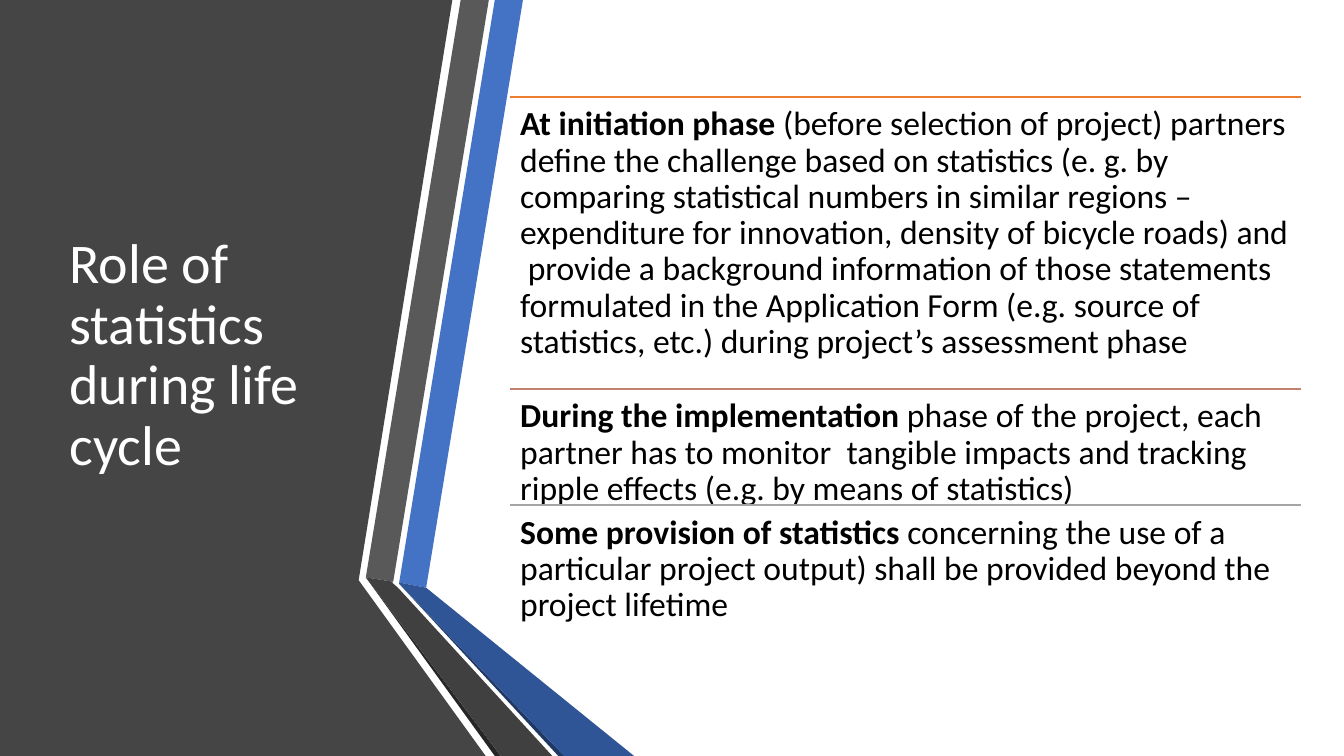
from dataclasses import dataclass

import lxml.etree
import pptx
import pptx.dml.color
import pptx.enum.shapes
import pptx.enum.text
import pptx.oxml.ns
import pptx.util

Cm = pptx.util.Cm
Point = tuple[float, float]

COLOURS = {
    "panel": "454545",
    "blue": "4472C4",
    "grey": "595959",
    "grey edge": "262626",
    "blue edge": "203864",
    "blue fold": "2F5597",
    "grey fold": "404040",
    "orange": "ED7D31",
    "rose": "C48170",
    "silver": "A5A5A5",
    "white": "FFFFFF",
    "black": "000000",
}
FONT = "Calibri"
WIDTH, HEIGHT = 33.87, 19.05
PHASE_LEFT, PHASE_WIDTH = 12.86, 19.92
GREY_BEND: Point = (9.22, 14.55)
BLUE_BEND: Point = (10.06, 14.71)


@dataclass
class Band:
    colour: str
    points: list[Point]


@dataclass
class Phase:
    colour: str
    top: float
    height: float
    lead: str
    detail: str


BANDS = [
    Band("panel", [(0, 0), (11.4, 0), (9.04, 14.62), (12.24, HEIGHT), (0, HEIGHT)]),
    Band("blue", [(10.06, 14.68), (10.74, 14.81), (13.18, 0), (12.47, 0)]),
    Band("grey", [(12.32, 0), (11.61, 0), GREY_BEND, (9.91, 14.66)]),
    Band("grey edge", [GREY_BEND, (12.47, HEIGHT), (12.62, HEIGHT)]),
    Band("blue edge", [BLUE_BEND, (14.07, HEIGHT), (14.22, HEIGHT)]),
    Band("blue fold", [BLUE_BEND, (14.22, HEIGHT), (15.98, HEIGHT),
                       (10.74, 14.81), (10.06, 14.68)]),
    Band("grey fold", [(13.92, HEIGHT), (10.03, 14.81), (9.88, 14.68),
                       (9.91, 14.66), GREY_BEND, (12.62, HEIGHT)]),
]

PHASES = [
    Phase("orange", 2.44, 7.36, "At initiation phase ",
          "(before selection of project) partners define the challenge based on "
          "statistics (e. g. by comparing statistical numbers in similar regions – "
          "expenditure for innovation, density of bicycle roads) and  provide a "
          "background information of those statements formulated in the Application "
          "Form (e.g. source of statistics, etc.) during project’s assessment phase"),
    Phase("rose", 9.8, 2.93, "During the implementation ",
          "phase of the project, each partner has to monitor  tangible impacts and "
          "tracking ripple effects (e.g. by means of statistics)"),
    Phase("silver", 12.73, 3.89, "Some provision of statistics ",
          "concerning the use of a particular project output) shall be provided "
          "beyond the project lifetime"),
]


def rgb(name: str) -> pptx.dml.color.RGBColor:
    return pptx.dml.color.RGBColor.from_string(COLOURS[name])


def write_text(paragraph, text: str, *, size: float, colour: str, bold: bool = False) -> None:
    """Append one formatted run to a left-aligned paragraph."""
    paragraph.alignment = pptx.enum.text.PP_ALIGN.LEFT
    paragraph.line_spacing = 0.9
    run = paragraph.add_run()
    run.text = text
    run.font.name = FONT
    run.font.size = pptx.util.Pt(size)
    run.font.bold = bold
    run.font.color.rgb = rgb(colour)


def draw_band(slide, band: Band) -> None:
    start, *others = [(Cm(x), Cm(y)) for x, y in band.points]
    builder = slide.shapes.build_freeform(*start)
    builder.add_line_segments(others, close=True)
    shape = builder.convert_to_shape()
    shape.shadow.inherit = False
    shape.fill.solid()
    shape.fill.fore_color.rgb = rgb(band.colour)
    shape.line.fill.background()


def draw_title(slide, text: str) -> None:
    title = slide.shapes.title
    # The placeholder starts at the back, behind the dark panel.
    title.element.getparent().append(title.element)
    title.left, title.top, title.width, title.height = Cm(1.5), Cm(1.9), Cm(7.72), Cm(14.17)
    frame = title.text_frame
    frame.word_wrap = True
    frame.auto_size = pptx.enum.text.MSO_AUTO_SIZE.NONE
    frame.vertical_anchor = pptx.enum.text.MSO_ANCHOR.MIDDLE
    write_text(frame.paragraphs[0], text, size=40, colour="white")


def draw_phase(slide, phase: Phase) -> None:
    rule = slide.shapes.add_connector(
        pptx.enum.shapes.MSO_CONNECTOR.STRAIGHT,
        Cm(PHASE_LEFT), Cm(phase.top), Cm(PHASE_LEFT + PHASE_WIDTH), Cm(phase.top))
    rule.line.color.rgb = rgb(phase.colour)
    rule.line.width = pptx.util.Pt(1)
    lxml.etree.SubElement(rule.element.spPr, pptx.oxml.ns.qn("a:effectLst"))

    box = slide.shapes.add_textbox(
        Cm(PHASE_LEFT), Cm(phase.top), Cm(PHASE_WIDTH), Cm(phase.height))
    frame = box.text_frame
    frame.word_wrap = True
    frame.vertical_anchor = pptx.enum.text.MSO_ANCHOR.TOP
    frame.margin_left = frame.margin_right = Cm(0.25)
    frame.margin_top = frame.margin_bottom = Cm(0.25)
    paragraph = frame.paragraphs[0]
    write_text(paragraph, phase.lead, size=24, colour="black", bold=True)
    write_text(paragraph, phase.detail, size=24, colour="black")


def main() -> None:
    presentation = pptx.Presentation()
    presentation.slide_width, presentation.slide_height = Cm(WIDTH), Cm(HEIGHT)
    title_only = presentation.slide_layouts.get_by_name("Title Only")
    slide = presentation.slides.add_slide(title_only)
    for band in BANDS:
        draw_band(slide, band)
    draw_title(slide, "Role of statistics during life cycle")
    for phase in PHASES:
        draw_phase(slide, phase)
    presentation.save("out.pptx")


if __name__ == "__main__":
    main()
